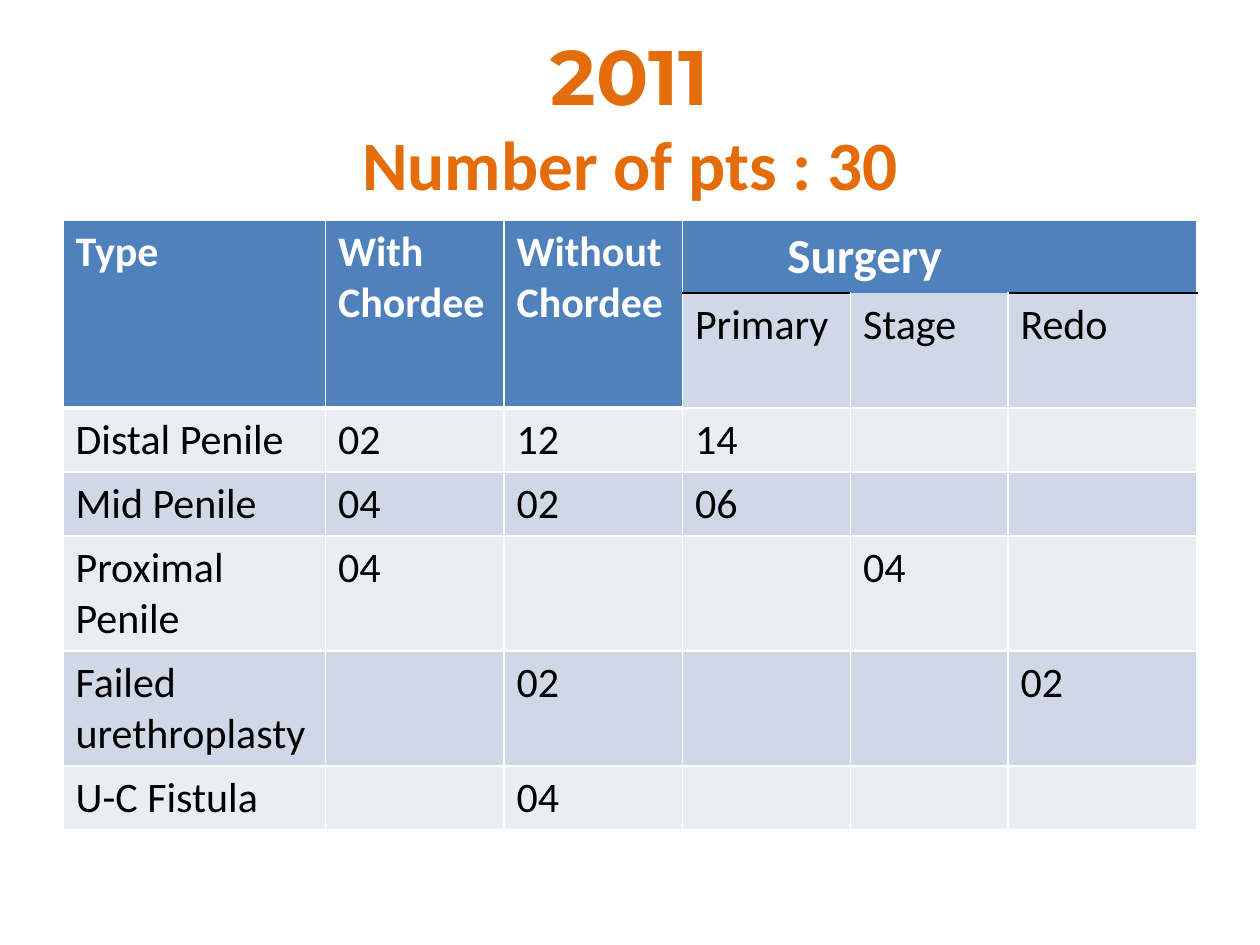
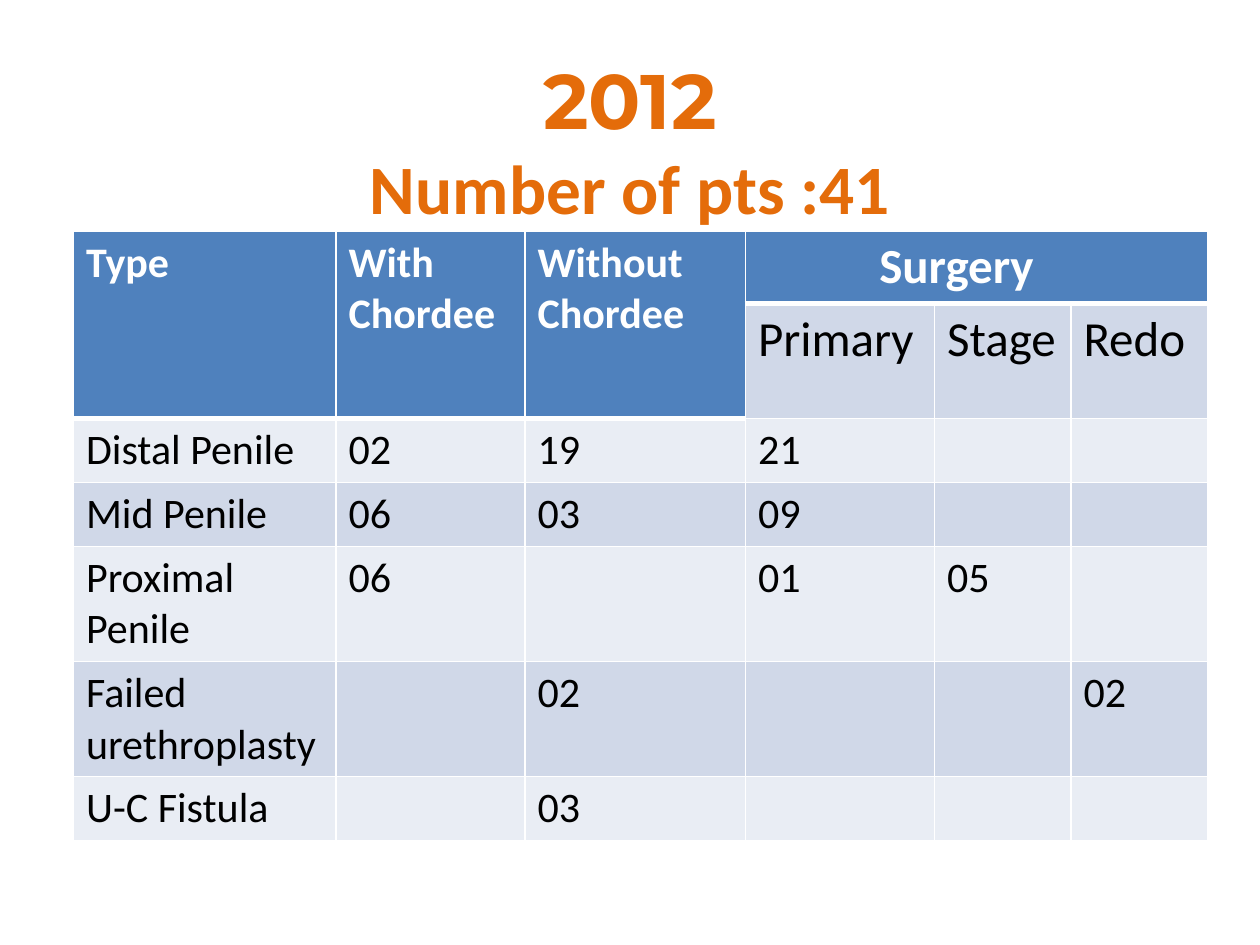
from lxml.etree import SubElement
from pptx import Presentation
from pptx.dml.color import RGBColor
from pptx.enum.text import MSO_ANCHOR, MSO_AUTO_SIZE, PP_ALIGN
from pptx.oxml.ns import qn
from pptx.util import Pt

ORANGE = RGBColor(0xE4, 0x6C, 0x0A)
BLUE = RGBColor(0x4F, 0x81, 0xBD)
BAND_DARK = RGBColor(0xD0, 0xD8, 0xE8)
BAND_LIGHT = RGBColor(0xE9, 0xED, 0xF4)
WHITE = RGBColor(0xFF, 0xFF, 0xFF)
BLACK = RGBColor(0, 0, 0)

BODY_FONT = "Calibri"
YEAR_FONT = "Montserrat"
ROW_HEIGHTS = [40.8, 65.6, 36.5, 36.5, 65.6, 65.6, 36.5]
HEADINGS = ["Type", "With Chordee", "Without Chordee"]
SURGERIES = ["Primary", "Stage", "Redo"]
TYPES = ["Distal Penile", "Mid Penile", "Proximal Penile",
         "Failed urethroplasty", "U-C Fistula"]


class Deck:
    """Shared style and the slide being built."""

    def __init__(self):
        self.prs = Presentation()
        self.prs.slide_width, self.prs.slide_height = Pt(720), Pt(540)
        self.s = None

    def slide(self):
        self.s = self.prs.slides.add_slide(self.prs.slide_layouts[5])

    def run(self, p, text, size, color, bold=False, font=BODY_FONT):
        r = p.add_run()
        r.text = text
        r.font.size, r.font.name, r.font.bold = Pt(size), font, bold
        r.font.color.rgb = color

    def title(self, year, count, height):
        sp = self.s.shapes.title
        sp.left, sp.top, sp.width, sp.height = Pt(36), Pt(21.6), Pt(648), Pt(height)
        tf = sp.text_frame
        tf.auto_size = MSO_AUTO_SIZE.NONE
        tf.vertical_anchor = MSO_ANCHOR.MIDDLE
        p = tf.paragraphs[0]
        p.alignment = PP_ALIGN.CENTER
        self.run(p, year, 44.1, ORANGE, True, YEAR_FONT)
        p.add_line_break()
        self.run(p, count, 39.6, ORANGE, True)

    def borders(self, cell, **changes):
        """Draw white 1 pt edges; changes gives (colour, width) or None by side."""
        tcPr = cell._tc.get_or_add_tcPr()
        for i, side in enumerate("LRTB"):
            edge = changes.get(side, (WHITE, 1))
            ln = SubElement(tcPr, qn("a:ln" + side))
            if edge is None:
                SubElement(ln, qn("a:noFill"))
            else:
                color, width = edge
                ln.set("w", str(Pt(width)))
                fill = SubElement(ln, qn("a:solidFill"))
                SubElement(fill, qn("a:srgbClr")).set("val", str(color))
            tcPr.insert(i, ln)

    def cell(self, cell, text, fill, size=24, color=BLACK, bold=False, **changes):
        cell.fill.solid()
        cell.fill.fore_color.rgb = fill
        self.borders(cell, **changes)
        if text:
            self.run(cell.text_frame.paragraphs[0], text, size, color, bold)

    def table(self, left, top, widths, values, surgery_indent, sub_size, ruled):
        """Fill the patient table; ruled puts a black line under Surgery."""
        frame = self.s.shapes.add_table(
            len(ROW_HEIGHTS), len(widths), Pt(left), Pt(top),
            Pt(sum(widths)), Pt(sum(ROW_HEIGHTS)))
        tbl = frame.table
        for col, width in zip(tbl.columns, widths):
            col.width = Pt(width)
        for row, height in zip(tbl.rows, ROW_HEIGHTS):
            row.height = Pt(height)

        # Two-level header
        thick = (WHITE, 3)
        rule = (BLACK, 1) if ruled else thick
        for c, text in enumerate(HEADINGS):
            tbl.cell(0, c).merge(tbl.cell(1, c))
            self.cell(tbl.cell(0, c), text, BLUE, 24, WHITE, True, B=thick)
        surgery = tbl.cell(0, 3)
        surgery.merge(tbl.cell(0, 5))
        surgery.margin_left = Pt(surgery_indent)
        self.cell(surgery, "Surgery", BLUE, 28, WHITE, True, B=rule)
        for c, text in enumerate(SURGERIES, start=3):
            top_edge = None if ruled and text == "Stage" else rule
            self.cell(tbl.cell(1, c), text, BAND_DARK, sub_size, T=top_edge)

        # Banded body rows
        for i, (kind, counts) in enumerate(zip(TYPES, values)):
            fill = BAND_DARK if i % 2 else BAND_LIGHT
            for c, text in enumerate([kind, *counts]):
                # The first body row meets the thick edge of the header
                edge = thick if i == 0 and c < 3 else (WHITE, 1)
                self.cell(tbl.cell(i + 2, c), text, fill, T=edge)


def main():
    deck = Deck()

    # 2011
    deck.slide()
    deck.title("2011", "Number of pts : 30", 90)
    deck.table(36, 126, [150, 102, 102, 96, 90, 108], [
        ["02", "12", "14", "", ""],
        ["04", "02", "06", "", ""],
        ["04", "", "", "04", ""],
        ["", "02", "", "", "02"],
        ["", "04", "", "", ""],
    ], surgery_indent=60, sub_size=24, ruled=True)

    # 2012
    deck.slide()
    deck.title("2012", "Number of pts :41", 117)
    deck.table(42, 132, [150, 108, 126, 108, 78, 78], [
        ["02", "19", "21", "", ""],
        ["06", "03", "09", "", ""],
        ["06", "", "01", "05", ""],
        ["", "02", "", "", "02"],
        ["", "03", "", "", ""],
    ], surgery_indent=76.5, sub_size=28, ruled=False)

    deck.prs.save("out.pptx")


if __name__ == "__main__":
    main()
